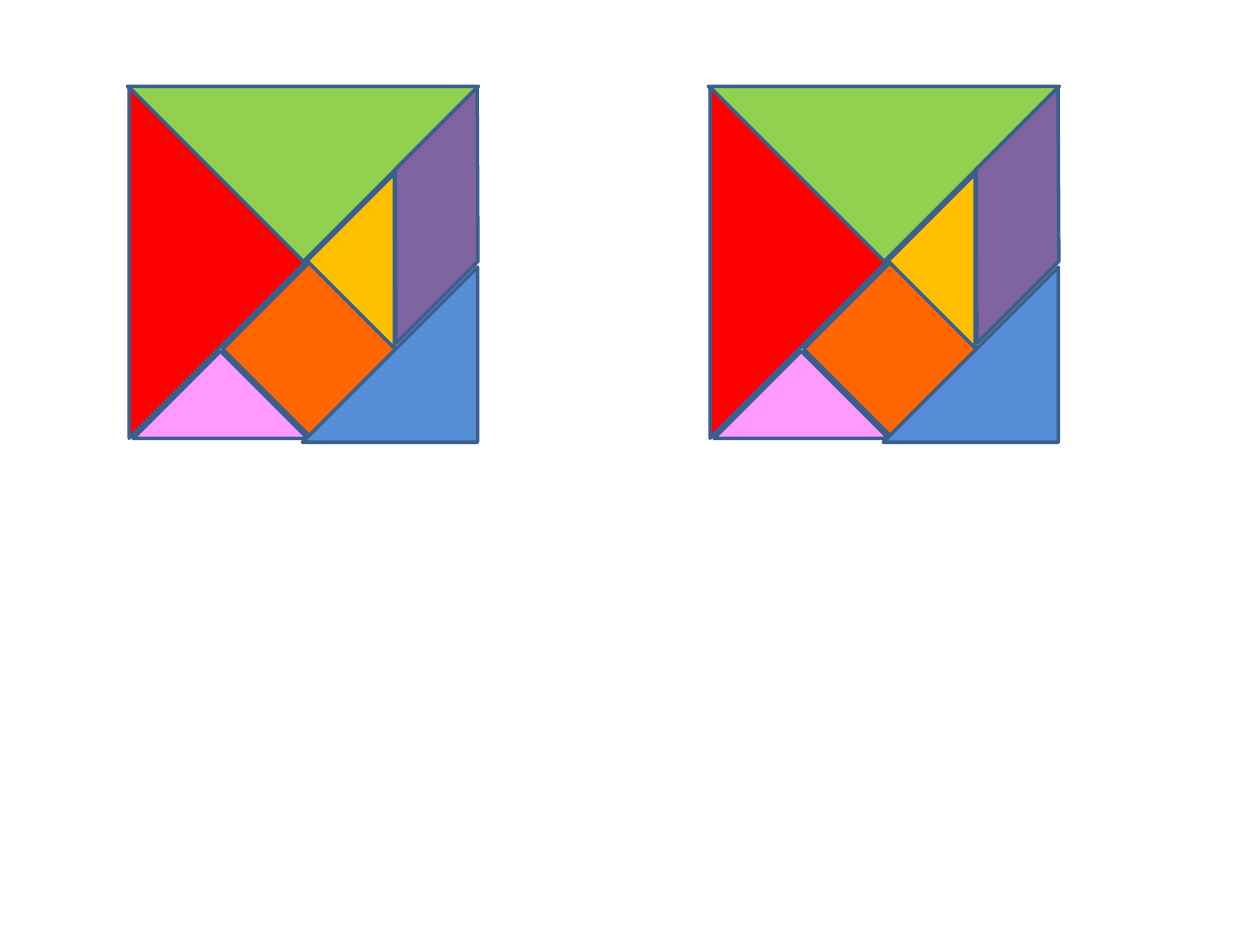
from pptx import Presentation
from pptx import util as u
from pptx.dml.color import RGBColor
from pptx.enum import shapes

KIND = shapes.MSO_SHAPE
LARGE, MEDIUM, SMALL = 1.97, 1.39, 0.98
LEFTS = (0, 4.61)
PIECES = [
    (KIND.RIGHT_TRIANGLE, 1.42, -0.3, LARGE, LARGE, 315, "92D050"),
    (KIND.RIGHT_TRIANGLE, 0.04, 1.1, LARGE, LARGE, 225, "FF0000"),
    (KIND.RECTANGLE, 1.97, 2.28, SMALL, SMALL, 45, "FF6600"),
    (KIND.RIGHT_TRIANGLE, 1.26, 2.99, SMALL, SMALL, 135, "FF99FF"),
    (KIND.RIGHT_TRIANGLE, 2.64, 1.58, SMALL, SMALL, 45, "FFC000"),
    (KIND.PARALLELOGRAM, 2.52, 1.22, 1.89, SMALL, 135, "8064A2"),
    (KIND.RIGHT_TRIANGLE, 2.4, 2.12, MEDIUM, MEDIUM, 270, "558ED5"),
]


def color(value):
    return RGBColor.from_string(value)


class Tangram:
    outline = "3A5F8C"
    line_format = {"width": u.Pt(2)}
    slant = 0.99

    def __init__(self, prs):
        self.s = prs.slides.add_slide(prs.slide_layouts[6])

    def piece(self, kind, left, top, width, height, angle, fill):
        box = [u.Inches(v) for v in (left, top, width, height)]
        sp = self.s.shapes.add_shape(kind, *box)
        sp.rotation = angle
        sp.shadow.inherit = False
        sp.fill.solid()
        sp.fill.fore_color.rgb = color(fill)
        sp.line.color.rgb = color(self.outline)
        for name, value in self.line_format.items():
            setattr(sp.line, name, value)
        if kind == KIND.PARALLELOGRAM:
            sp.adjustments[0] = self.slant

    def square(self, offset):
        for kind, left, *rest in PIECES:
            self.piece(kind, left + offset, *rest)


def main():
    prs = Presentation()
    prs.slide_width = u.Inches(10)
    prs.slide_height = u.Inches(7.5)
    tangram = Tangram(prs)
    for left in LEFTS:
        tangram.square(left)
    prs.save("out.pptx")


if __name__ == "__main__":
    main()
